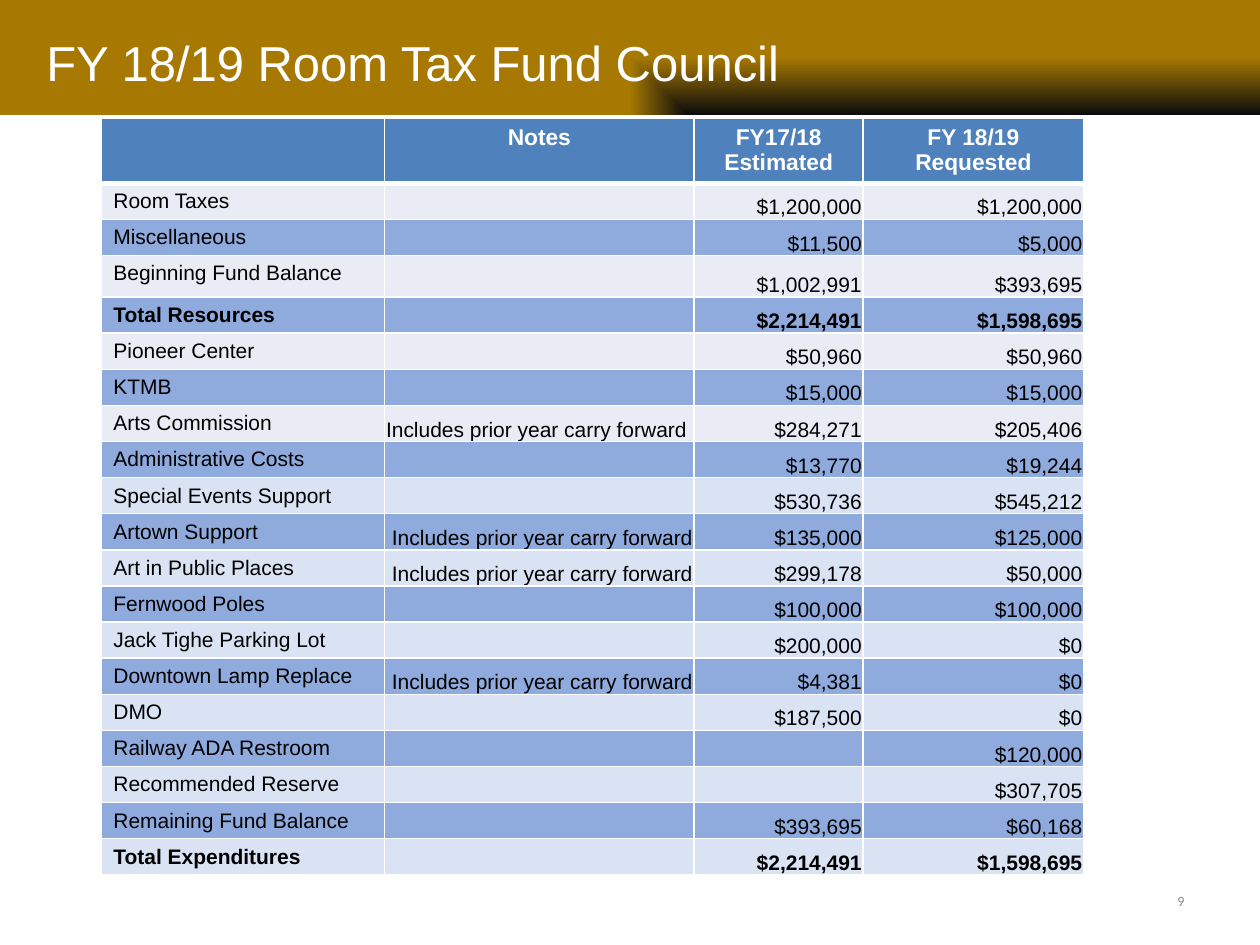
from lxml.etree import SubElement
from pptx import Presentation
from pptx.dml.color import RGBColor
from pptx.enum.shapes import MSO_SHAPE
from pptx.enum.text import MSO_ANCHOR, PP_ALIGN
from pptx.oxml import parse_xml
from pptx.oxml.ns import nsdecls, qn
from pptx.util import Inches, Pt

WIDE, HIGH = 10, 7.5
WHITE, BLACK, GRAY = "FFFFFF", "000000", "898989"
GOLD, DARK = "A77903", "0C0C0C"
BLUE, MID, PALE, LIGHT = "4F81BD", "8FAADC", "E9ECF4", "DAE3F3"

COLS = [2.25, 2.46, 1.34, 1.75]
HEAD_H, TALL_H = 0.5, 0.33
TALL_ROW = 3
PALE_END = 8  # the light stripe changes tint from this row on
PAD, SNUG = (0.1, 0.05, 0.1, 0.03), (0.01, 0.01, 0.01, 0)

HEADS = ["", "Notes", "FY17/18 Estimated", "FY 18/19 Requested"]
CARRY = "Includes prior year carry forward"
FUNDS = [
    ("Room Taxes", "", "$1,200,000", "$1,200,000"),
    ("Miscellaneous", "", "$11,500", "$5,000"),
    ("Beginning Fund Balance", "", "$1,002,991", "$393,695"),
    ("Total Resources", "", "$2,214,491", "$1,598,695"),
    ("Pioneer Center", "", "$50,960", "$50,960"),
    ("KTMB", "", "$15,000", "$15,000"),
    ("Arts Commission", CARRY + " ", "$284,271", "$205,406"),
    ("Administrative Costs", "", "$13,770", "$19,244"),
    ("Special Events Support", "", "$530,736", "$545,212"),
    ("Artown Support", CARRY, "$135,000", "$125,000"),
    ("Art in Public Places", CARRY, "$299,178", "$50,000"),
    ("Fernwood Poles", "", "$100,000", "$100,000"),
    ("Jack Tighe Parking Lot", "", "$200,000", "$0"),
    ("Downtown Lamp Replace", CARRY, "$4,381", "$0"),
    ("DMO", "", "$187,500", "$0"),
    ("Railway ADA Restroom", "", "", "$120,000"),
    ("Recommended Reserve", "", "", "$307,705"),
    ("Remaining Fund Balance", "", "$393,695", "$60,168"),
    ("Total Expenditures", "", "$2,214,491", "$1,598,695"),
]


def color(code):
    return RGBColor.from_string(code)


def write(para, text, size, code, face="Arial", bold=False):
    run = para.add_run()
    run.text = text
    font = run.font
    font.size, font.name, font.bold = Pt(size), face, bold
    font.color.rgb = color(code)


def text_box(slide, box):
    frame = slide.shapes.add_textbox(*map(Inches, box)).text_frame
    frame.word_wrap = True
    frame.vertical_anchor = MSO_ANCHOR.MIDDLE
    return frame.paragraphs[0]


def add_band(slide, box):
    """Gold band that darkens toward its lower right corner."""
    band = slide.shapes.add_shape(MSO_SHAPE.RECTANGLE, *map(Inches, box))
    band.shadow.inherit = False
    band.line.fill.background()
    grad = parse_xml(
        f'<a:gradFill {nsdecls("a")} rotWithShape="1"><a:gsLst>'
        f'<a:gs pos="0"><a:srgbClr val="{DARK}"/></a:gs>'
        f'<a:gs pos="100000"><a:srgbClr val="{GOLD}"/></a:gs></a:gsLst>'
        '<a:path path="rect"><a:fillToRect l="100000" t="100000"/></a:path>'
        '</a:gradFill>')
    band._element.spPr.find(qn("a:prstGeom")).addnext(grad)


def add_title(slide, box):
    para = text_box(slide, box)
    props = para._p.get_or_add_pPr()
    props.set("marL", str(Inches(0.5)))
    props.set("indent", str(-Inches(0.5)))
    write(para, "FY 18/19 Room Tax Fund Council", 28, WHITE)


def add_rules(cell, row):
    """White cell borders, heavier between the head and the first row."""
    props = cell._tc.get_or_add_tcPr()
    heavy = {0: "lnB", 1: "lnT"}.get(row)
    for side in ("lnL", "lnR", "lnT", "lnB"):
        rule = SubElement(props, qn("a:" + side), w=str(Pt(3 if side == heavy else 1)))
        SubElement(SubElement(rule, qn("a:solidFill")), qn("a:srgbClr"), val=WHITE)


def fill_cell(cell, text, row, col):
    head, label = row == 0, col == 0
    add_rules(cell, row)
    tint = BLUE if head else MID if row % 2 == 0 else PALE if row < PALE_END else LIGHT
    cell.fill.solid()
    cell.fill.fore_color.rgb = color(tint)
    pad = PAD if head or label else SNUG
    (cell.margin_left, cell.margin_top,
     cell.margin_right, cell.margin_bottom) = map(Inches, pad)
    cell.vertical_anchor = MSO_ANCHOR.TOP if head or label else MSO_ANCHOR.BOTTOM
    para = cell.text_frame.paragraphs[0]
    if not text:
        SubElement(para._p, qn("a:endParaRPr"), sz="1200")
        return
    para.alignment = (PP_ALIGN.CENTER if head else
                      PP_ALIGN.LEFT if label else PP_ALIGN.RIGHT)
    bold = head or FUNDS[row - 1][0].startswith("Total")
    write(para, text, 13 if head else 12, WHITE if head else BLACK, bold=bold)


def add_funds(slide, box):
    rows = [HEADS, *FUNDS]
    table = slide.shapes.add_table(len(rows), len(COLS), *map(Inches, box)).table
    table.horz_banding = False
    for col, width in zip(table.columns, COLS):
        col.width = Inches(width)
    even = (box[3] - HEAD_H - TALL_H) / (len(rows) - 2)
    for i, row in enumerate(rows):
        table.rows[i].height = Inches({0: HEAD_H, TALL_ROW: TALL_H}.get(i, even))
        for j, text in enumerate(row):
            fill_cell(table.cell(i, j), text, i, j)


def add_number(slide, box):
    para = text_box(slide, box)
    para.alignment = PP_ALIGN.RIGHT
    write(para, "9", 8, GRAY, "Calibri")


def main():
    deck = Presentation()
    deck.slide_width, deck.slide_height = Inches(WIDE), Inches(HIGH)
    slide = deck.slides.add_slide(deck.slide_layouts[6])
    add_band(slide, (0, 0, WIDE, 0.91))
    add_title(slide, (0.27, 0, 9.23, 0.99))
    add_funds(slide, (0.8, 0.94, sum(COLS), 5.99))
    add_number(slide, (7.17, 6.95, 2.33, 0.4))
    deck.save("out.pptx")


if __name__ == "__main__":
    main()
